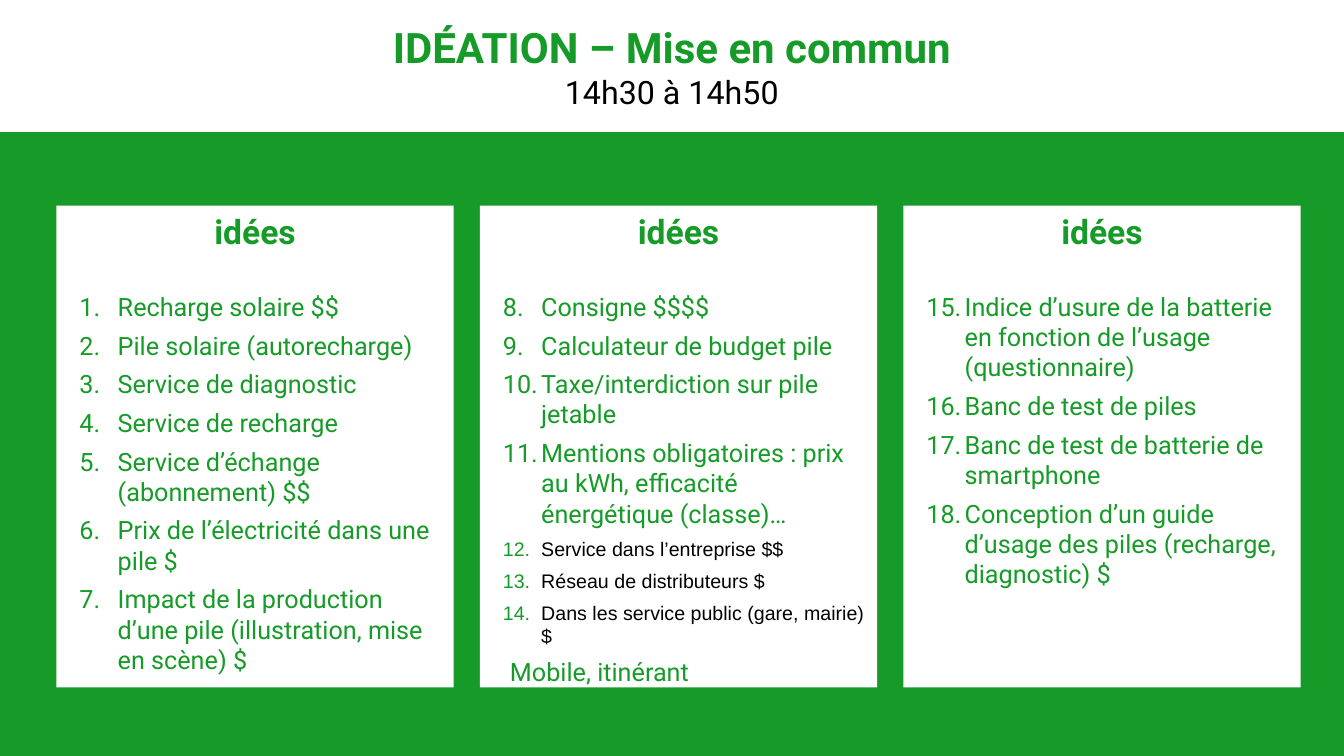
from pptx import Presentation
from pptx.dml.color import RGBColor
from pptx.enum.shapes import MSO_SHAPE
from pptx.enum.text import MSO_ANCHOR, PP_ALIGN
from pptx.oxml import parse_xml
from pptx.oxml.ns import nsdecls
from pptx.util import Inches, Pt

GREEN, WHITE, BLACK = "169B28", "FFFFFF", "000000"
MAIN = ("Roboto", 18, GREEN)
SMALL = ("Arial", 14, BLACK)
TITLE = "IDÉATION – Mise en commun"
SCHEDULE = "14h30 à 14h50"
HEADING = "idées"
COLUMNS = [
    [
        ("Recharge solaire $$", MAIN),
        ("Pile solaire (autorecharge)", MAIN),
        ("Service de diagnostic", MAIN),
        ("Service de recharge", MAIN),
        ("Service d’échange (abonnement) $$", MAIN),
        ("Prix de l’électricité dans une pile $", MAIN),
        ("Impact de la production d’une pile (illustration, mise en scène) $", MAIN),
    ],
    [
        ("Consigne $$$$", MAIN),
        ("Calculateur de budget pile", MAIN),
        ("Taxe/interdiction sur pile jetable", MAIN),
        ("Mentions obligatoires : prix au kWh, efficacité énergétique (classe)…", MAIN),
        ("Service dans l’entreprise $$", SMALL),
        ("Réseau de distributeurs $", SMALL),
        ("Dans les service public (gare, mairie) $", SMALL),
    ],
    [
        ("Indice d’usure de la batterie en fonction de l’usage (questionnaire)", MAIN),
        ("Banc de test de piles", MAIN),
        ("Banc de test de batterie de smartphone", MAIN),
        ("Conception d’un guide d’usage des piles (recharge, diagnostic) $", MAIN),
    ],
]
CLOSING_NOTES = {1: "Mobile, itinérant"}

WIDTH, HEIGHT, HEADER_HEIGHT = 13.33, 7.5, 1.31
CARD_LEFT, CARD_TOP, CARD_WIDTH, CARD_HEIGHT = 0.56, 2.04, 3.94, 4.78
CARD_STEP = 4.2
LIST_TOP, LIST_HEIGHT = 2.84, 3.99
TEXT_INDENT, NUMBER_INDENT, NOTE_INDENT = 0.51, -0.38, 0.2


def color(value):
    return RGBColor.from_string(value)


def add_panel(slide, left, top, width, height):
    panel = slide.shapes.add_shape(
        MSO_SHAPE.RECTANGLE, Inches(left), Inches(top), Inches(width), Inches(height))
    panel.shadow.inherit = False
    panel.fill.solid()
    panel.fill.fore_color.rgb = color(WHITE)
    panel.line.fill.background()
    return panel.text_frame


def write(paragraph, text, style, bold=False, align=PP_ALIGN.LEFT):
    paragraph.text = text
    paragraph.alignment = align
    font = paragraph.font
    font.name, size, font_color = style
    font.size, font.bold = Pt(size), bold
    font.color.rgb = color(font_color)


def set_indent(paragraph, left, first_line=0):
    properties = paragraph._p.get_or_add_pPr()
    properties.set("marL", str(Inches(left)))
    properties.set("indent", str(Inches(first_line)))
    return properties


def set_number(paragraph, start):
    properties = set_indent(paragraph, TEXT_INDENT, NUMBER_INDENT)
    bullet_parts = (
        f'<a:buClr {nsdecls("a")}><a:srgbClr val="{GREEN}"/></a:buClr>',
        f'<a:buFont {nsdecls("a")} typeface="+mj-lt"/>',
        f'<a:buAutoNum {nsdecls("a")} type="arabicPeriod" startAt="{start}"/>',
    )
    position = list(properties).index(properties.find("{*}defRPr"))
    for offset, part in enumerate(bullet_parts):
        properties.insert(position + offset, parse_xml(part))


def add_header(slide):
    frame = add_panel(slide, 0, 0, WIDTH, HEADER_HEIGHT)
    frame.vertical_anchor = MSO_ANCHOR.MIDDLE
    write(frame.paragraphs[0], TITLE, ("Roboto", 30, GREEN), True, PP_ALIGN.CENTER)
    write(frame.add_paragraph(), SCHEDULE, ("Roboto", 23, BLACK), align=PP_ALIGN.CENTER)


def add_card(slide, left, ideas, start, note):
    heading = add_panel(slide, left, CARD_TOP, CARD_WIDTH, CARD_HEIGHT)
    heading.vertical_anchor = MSO_ANCHOR.TOP
    write(heading.paragraphs[0], HEADING, ("Roboto", 24, GREEN), True, PP_ALIGN.CENTER)
    frame = slide.shapes.add_textbox(
        Inches(left), Inches(LIST_TOP), Inches(CARD_WIDTH), Inches(LIST_HEIGHT)).text_frame
    frame.word_wrap = True
    for index, (idea, style) in enumerate(ideas):
        paragraph = frame.add_paragraph() if index else frame.paragraphs[0]
        write(paragraph, idea, style)
        paragraph.space_before = Pt(6 if index else 0)
        set_number(paragraph, start)
    if note:
        paragraph = frame.add_paragraph()
        write(paragraph, note, MAIN)
        paragraph.space_before = Pt(6)
        set_indent(paragraph, NOTE_INDENT)


def main():
    """Build the slide of pooled ideas and save it."""
    presentation = Presentation()
    presentation.slide_width, presentation.slide_height = Inches(WIDTH), Inches(HEIGHT)
    slide = presentation.slides.add_slide(presentation.slide_layouts[6])
    slide.background.fill.solid()
    slide.background.fill.fore_color.rgb = color(GREEN)
    add_header(slide)
    start = 1
    for column, ideas in enumerate(COLUMNS):
        left = CARD_LEFT + column * CARD_STEP
        add_card(slide, left, ideas, start, CLOSING_NOTES.get(column))
        start += len(ideas)
    presentation.save("out.pptx")


if __name__ == "__main__":
    main()
